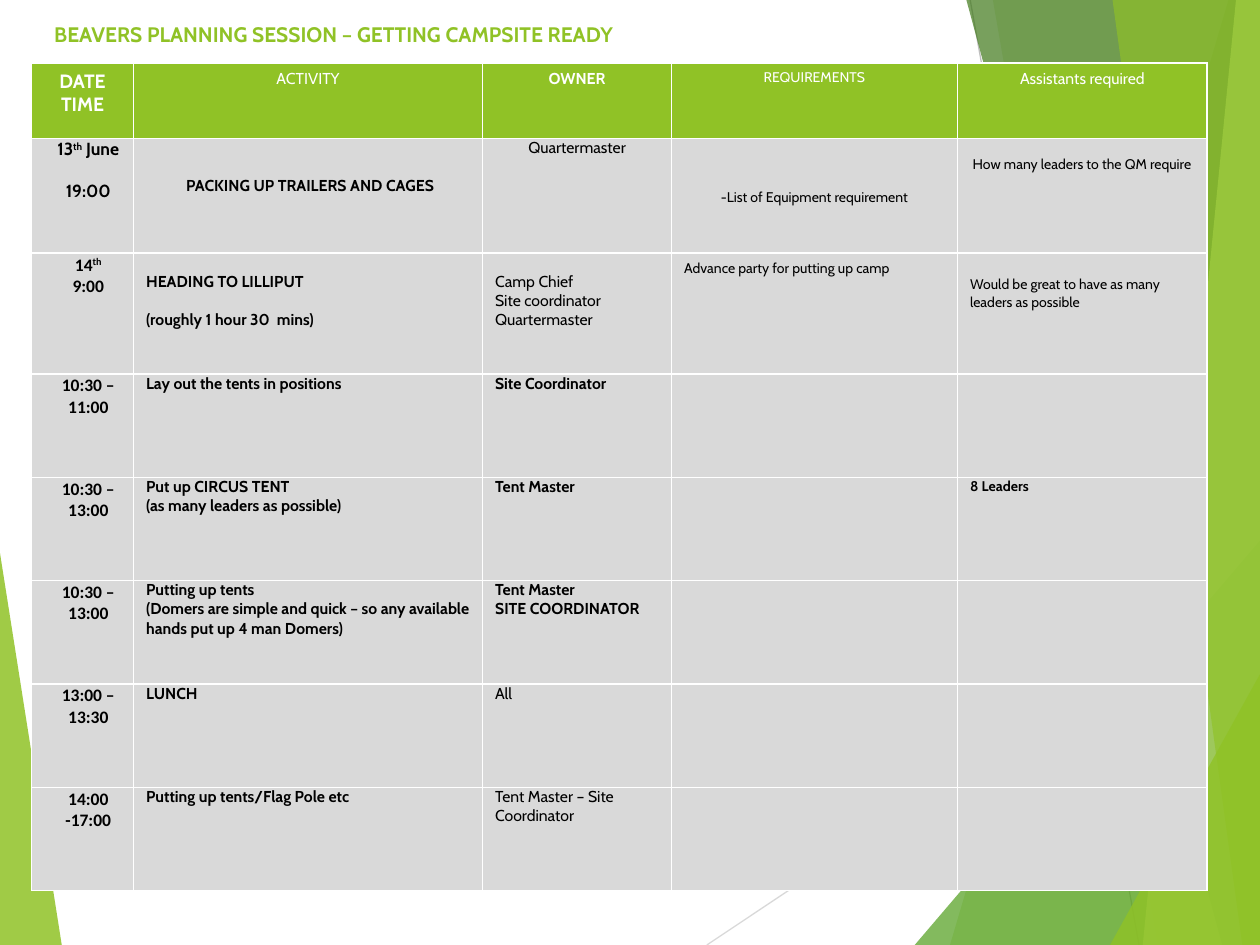
from lxml.etree import SubElement
from pptx import Presentation
from pptx.dml.color import RGBColor
from pptx.enum.shapes import MSO_CONNECTOR
from pptx.enum.text import MSO_ANCHOR, MSO_AUTO_SIZE, PP_ALIGN
from pptx.oxml.ns import qn
from pptx.util import Inches, Pt

COLS, ROWS = 100, 75  # grid units across and down the slide
GREEN, GREY, WHITE, BLACK = "90C226", "D9D9D9", "FFFFFF", "000000"
MID, LEFT = PP_ALIGN.CENTER, PP_ALIGN.LEFT


def color(code):
    return RGBColor.from_string(code)


class Deck:
    font = "Cabin"

    def __init__(self):
        self.prs = Presentation()
        self.prs.slide_width, self.prs.slide_height = Inches(10), Inches(7.5)
        self.slide = self.prs.slides.add_slide(self.prs.slide_layouts[5])
        self.shapes = self.slide.shapes

    def x(self, cols):
        return round(self.prs.slide_width * cols / COLS)

    def y(self, rows):
        return round(self.prs.slide_height * rows / ROWS)

    def facet(self, fill, alpha, *points):
        """Translucent polygon."""
        spots = [(self.x(a), self.y(b)) for a, b in points]
        pen = self.shapes.build_freeform(*spots[0], scale=1.0)
        pen.add_line_segments(spots[1:], close=True)
        shape = pen.convert_to_shape()
        shape.shadow.inherit = False
        shape.line.fill.background()
        shape.fill.solid()
        shape.fill.fore_color.rgb = color(fill)
        tint = shape.element.spPr.find(qn("a:solidFill"))[0]
        SubElement(tint, qn("a:alpha"), val=str(alpha * 1000))

    def line(self, tone, start, end):
        (a, b), (c, d) = start, end
        rule = self.shapes.add_connector(
            MSO_CONNECTOR.STRAIGHT, self.x(a), self.y(b), self.x(c), self.y(d))
        rule.line.color.rgb = color(tone)
        rule.line.width = Pt(0.75)
        SubElement(rule.element.spPr, qn("a:effectLst"))

    def title(self, text, left, top, width, height):
        box = self.shapes.title
        box.left, box.top = self.x(left), self.y(top)
        box.width, box.height = self.x(width), self.y(height)
        frame = box.text_frame
        frame.auto_size, frame.word_wrap = MSO_AUTO_SIZE.NONE, True
        frame.vertical_anchor = MSO_ANCHOR.MIDDLE
        self.words(frame, text, 12, GREEN, True, LEFT)
        box.element.getparent().append(box.element)  # bring to front

    def words(self, frame, text, size, tone, bold, align, font=None, gap=0):
        """Fill a frame; newlines split paragraphs, carets wrap superscripts."""
        for i, part in enumerate(text.split("\n")):
            para = frame.add_paragraph() if i else frame.paragraphs[0]
            para.alignment = align
            if i and gap:
                para.space_before = Pt(gap)
            para.font.name, para.font.size = font or self.font, Pt(size)
            para.font.bold, para.font.color.rgb = bold, color(tone)
            for j, bit in enumerate(part.split("^")):
                if bit:
                    run = para.add_run()
                    run.text = bit
                    if j % 2:
                        run.font._element.set("baseline", "30000")

    def table(self, left, top, widths, heights):
        frame = self.shapes.add_table(
            len(heights), len(widths), self.x(left), self.y(top),
            self.x(sum(widths)), self.y(sum(heights)))
        grid = frame.table
        grid.horz_banding = False
        for col, wide in zip(grid.columns, widths):
            col.width = self.x(wide)
        for row, high in zip(grid.rows, heights):
            row.height = self.y(high)
        return grid

    def cell(self, cell, fill, text="", pad=(0.1, 0.05, 0.1, 0.05), skip=0,
             size=9, tone=BLACK, bold=True, align=LEFT, font=None, gap=0):
        """Style one cell; skip is the number of lines left free on top."""
        west, north, east, south = pad
        cell.margin_left, cell.margin_right = Inches(west), Inches(east)
        cell.margin_top = Inches(north) + Pt(skip * size * 1.2)
        cell.margin_bottom = Inches(south)
        cell.vertical_anchor = MSO_ANCHOR.TOP
        props = cell._tc.get_or_add_tcPr()
        for side in ("lnL", "lnR", "lnT", "lnB"):
            edge = SubElement(props, qn("a:" + side), w=str(Pt(1)))
            SubElement(SubElement(edge, qn("a:solidFill")), qn("a:srgbClr"), val=WHITE)
        cell.fill.solid()
        cell.fill.fore_color.rgb = color(fill)
        if text:
            self.words(cell.text_frame, text, size, tone, bold, align, font, gap)


HEADS = [
    ("DATE\nTIME", dict(size=11)),
    ("ACTIVITY", dict(bold=False)),
    ("OWNER", {}),
    ("REQUIREMENTS", dict(size=8, bold=False)),
    ("Assistants required", dict(bold=False)),
]

# Default look of each column
SLIM = (0.1, 0, 0.1, 0.05)
LOOKS = [
    dict(pad=(0.1, 0.01, 0.01, 0), size=10, align=MID, font="Calibri"),
    dict(pad=(0.1, 0, 0.07, 0)),
    dict(pad=SLIM),
    dict(size=8, bold=False),
    dict(size=8, bold=False),
]

# Each entry is text, or text with changes to the column's look
PLAIN = dict(bold=False)
PLAN = [
    [("13^th^ June\n19:00", dict(pad=(0.1, 0, 0.01, 0), font="Cabin", gap=12)),
     ("PACKING UP TRAILERS AND CAGES", dict(align=MID, skip=2)),
     ("Quartermaster", dict(bold=False, align=MID)),
     ("-List of Equipment requirement", dict(pad=SLIM, align=MID, skip=3)),
     ("How many leaders to the QM require", dict(pad=SLIM, align=MID, skip=1))],
    ["14^th^\n9:00",
     ("HEADING TO LILLIPUT\n(roughly 1 hour 30  mins)", dict(skip=1, gap=11)),
     ("Camp Chief\nSite coordinator\nQuartermaster", dict(bold=False, skip=1)),
     "Advance party for putting up camp",
     ("Would be great to have as many leaders as possible", dict(skip=1))],
    ["10:30 – 11:00", "Lay out the tents in positions", "Site Coordinator", "", ""],
    ["10:30 – 13:00", "Put up CIRCUS TENT\n(as many leaders as possible)",
     "Tent Master", "", ("8 Leaders", dict(pad=SLIM, bold=True))],
    ["10:30 – 13:00",
     "Putting up tents\n(Domers are simple and quick – so any available "
     "hands put up 4 man Domers)",
     "Tent Master\nSITE COORDINATOR", "", ""],
    ["13:00 – 13:30", "LUNCH", ("All", PLAIN), "", ""],
    ["14:00 -17:00", "Putting up tents/Flag Pole etc",
     ("Tent Master – Site Coordinator", PLAIN), "", ""],
]


def main():
    deck = Deck()

    # Backdrop of facets and fine lines
    deck.facet(GREEN, 85, (0, 43.9), (4.9, 75), (0, 75))
    deck.line("D9D9D9", (56.1, 75), (100, 45.7))
    deck.line("BFBFBF", (77, 0), (90.4, 75))
    for fill, alpha, top, foot in [(GREEN, 30, (97.5, 0), 75.4),
                                   (GREEN, 20, (78.8, 0), 91.9),
                                   ("54A021", 72, (100, 42.9), 72.6),
                                   ("3F7819", 70, (76.7, 0), 97),
                                   ("C0E474", 70, (98.1, 0), 90.7),
                                   (GREEN, 65, (88.3, 0), 98.6),
                                   (GREEN, 80, (100, 53.5), 88.1)]:
        deck.facet(fill, alpha, top, (foot, 75), (100, 75), (100, top[1]))

    # Heading
    deck.title("BEAVERS PLANNING SESSION – GETTING CAMPSITE READY", 3.3, 0.8, 92.5, 3.8)

    # Schedule
    grid = deck.table(2.5, 5, [8.1, 27.7, 15, 22.7, 19.8], [6, 9.1, 9.6] + [8.2] * 5)
    for col, (text, look) in enumerate(HEADS):
        deck.cell(grid.cell(0, col), GREEN, text, tone=WHITE, align=MID, **look)
    for row, items in enumerate(PLAN, 1):
        for col, item in enumerate(items):
            text, look = (item, {}) if isinstance(item, str) else item
            deck.cell(grid.cell(row, col), GREY, text, **{**LOOKS[col], **look})

    deck.prs.save("out.pptx")


if __name__ == "__main__":
    main()
